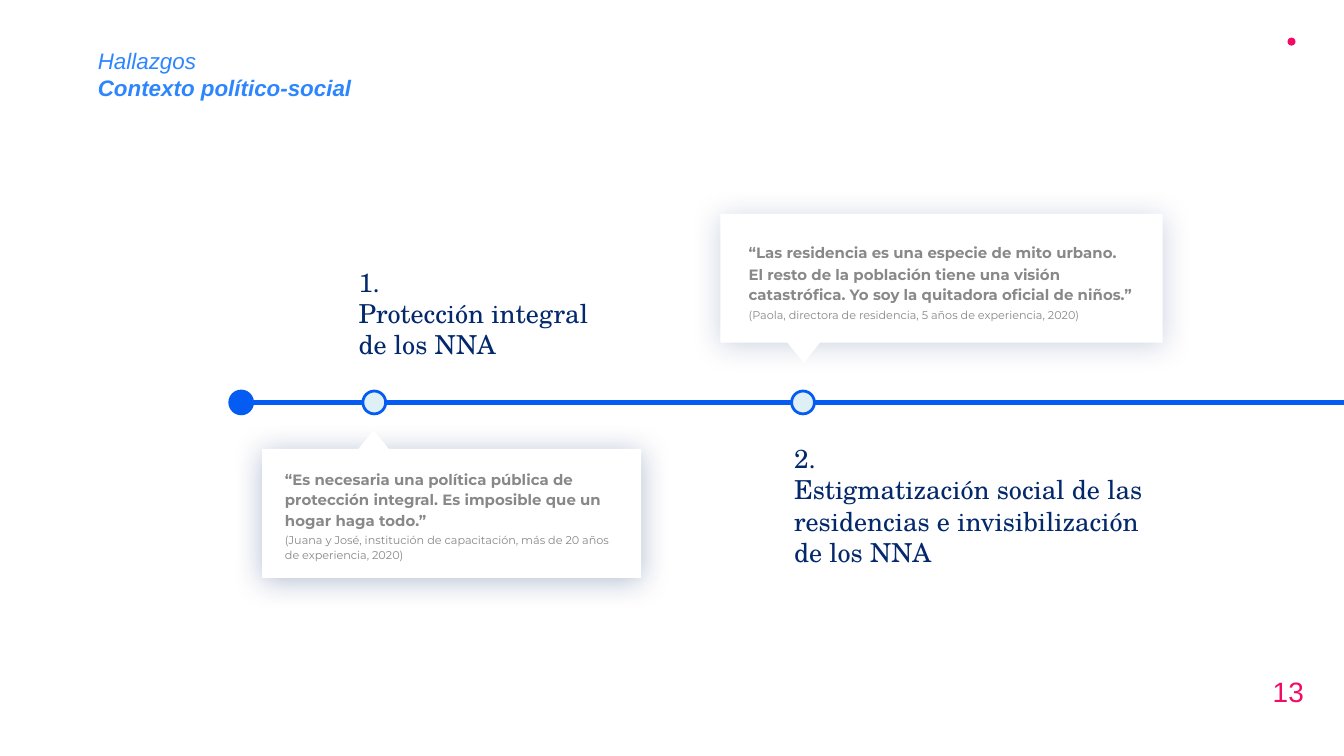
from lxml.etree import SubElement as Sub
from pptx import Presentation
from pptx.dml.color import RGBColor as Rgb
from pptx.enum.shapes import MSO_CONNECTOR as Link, MSO_SHAPE as Form
from pptx.oxml.ns import qn
from pptx.util import Inches, Pt

HUES = {"sky": "2E86FF", "pink": "F20A66", "blue": "055CF2", "pale": "DEF0F5",
        "navy": "03286B", "white": "FFFFFF", "gray": "888888"}
HEAD = {"name": "Arial", "size": Pt(12), "italic": True, "hue": "sky"}
PAGE = {"name": "Arial", "size": Pt(15), "hue": "pink"}
TOPIC = {"name": "TeX Gyre Schola", "size": Pt(14), "hue": "navy"}
QUOTE = {"name": "Montserrat", "size": Pt(8), "bold": True, "hue": "gray"}
CREDIT = QUOTE | {"size": Pt(6), "bold": False}
LOOSE = {"line_spacing": 1.15}
SIDES = ("left", "top", "right", "bottom")
COLS, ROWS = 100, 56.25
AXIS, DOT = 29.95, 1.7


class Deck:
    """Draws the slide on a grid of 100 columns by 56.25 square rows."""

    def __init__(self):
        self.prs = Presentation()
        self.prs.slide_width, self.prs.slide_height = Inches(10), Inches(5.625)
        self.cell = self.prs.slide_width / COLS
        self.slide = self.prs.slides.add_slide(self.prs.slide_layouts[6])

    def grid(self, *cells):
        return [round(c * self.cell) for c in cells]

    def text(self, spot, lines, inset=(1, 1, 1, 1), wrap=True, gap=None):
        frame = self.slide.shapes.add_textbox(*self.grid(*spot)).text_frame
        frame.word_wrap = wrap
        for side, size in zip(SIDES, self.grid(*inset)):
            setattr(frame, f"margin_{side}", size)
        for i, (words, style) in enumerate(lines):
            para = frame.add_paragraph() if i else frame.paragraphs[0]
            form = dict(gap or {})
            if gap and i:
                form["space_before"] = Pt(1)
            for key, val in form.items():
                setattr(para, key, val)
            run = para.add_run()
            run.text = words
            for key, val in style.items():
                if key == "hue":
                    run.font.color.rgb = Rgb.from_string(HUES[val])
                else:
                    setattr(run.font, key, val)

    def shape(self, kind, spot, fill, edge=None, turn=0, home=None):
        item = (home or self.slide).shapes.add_shape(kind, *self.grid(*spot))
        item.shadow.inherit = False
        item.rotation = turn
        item.fill.solid()
        item.fill.fore_color.rgb = Rgb.from_string(HUES[fill])
        if edge:
            self.stroke(item, edge, 1.5)
        else:
            item.line.fill.background()
        return item

    def stroke(self, item, hue, width):
        item.line.color.rgb = Rgb.from_string(HUES[hue])
        item.line.width = Pt(width)

    def line(self, start, end, hue, width):
        item = self.slide.shapes.add_connector(Link.STRAIGHT, *self.grid(*start, *end))
        self.stroke(item, hue, width)
        Sub(item._element.spPr, qn("a:effectLst"))

    def dot(self, left, fill):
        self.shape(Form.OVAL, (left, AXIS - DOT / 2, DOT, DOT), fill, "blue")

    def glow(self, item, share):
        shade = Sub(item._element.spPr.find(qn("a:effectLst")), qn("a:outerShdw"),
                    blurRad=str(Pt(15.8)), dist=str(Pt(1.5)), dir="5400000",
                    algn="bl", rotWithShape="0")
        tint = Sub(shade, qn("a:srgbClr"), val=HUES["navy"])
        Sub(tint, qn("a:alpha"), val=str(share * 1000))

    def card(self, box, tip, turn, share, spot, lines):
        group = self.slide.shapes.add_group_shape()
        self.glow(self.shape(Form.RECTANGLE, box, "white", turn=turn, home=group), share)
        self.shape(Form.ISOSCELES_TRIANGLE, (*tip, 3.2, 2), "white", turn=turn, home=group)
        self.text(spot, lines, (0, 0.3, 0, 0), gap=LOOSE)


def main():
    deck = Deck()
    deck.text((6.3, 2.5, 35.3, 4.3),
              [("Hallazgos", HEAD), ("Contexto político-social", HEAD | {"bold": True})])
    deck.text((94.7, 50.1, 2.4, 2.6), [("13", PAGE)], (0, 0.1, 0, 0), wrap=False)
    deck.shape(Form.OVAL, (95.8, 2.8, 0.6, 0.6), "pink")
    deck.line((17.6, AXIS), (COLS, AXIS), "blue", 2.25)
    for left, fill in ((17.1, "blue"), (27, "pale"), (58.9, "pale")):
        deck.dot(left, fill)
    for spot, lines in (
        ((25.7, 18.8, 22.5, 7.1), ("1.", "Protección integral", "de los NNA")),
        ((58.1, 31.9, 29.8, 7.1),
         ("2.", "Estigmatización social de las residencias e invisibilización de los NNA")),
    ):
        deck.text(spot, [(words, TOPIC) for words in lines])
    deck.card((19.5, 33.4, 28.2, 9.6), (26.2, 32), 0, 30, (21.2, 34.5, 24.8, 4.3), [
        ("“Es necesaria una política pública de protección integral. "
         "Es imposible que un hogar haga todo.”", QUOTE),
        ("(Juana y José, institución de capacitación, más de 20 años de experiencia, 2020)",
         CREDIT)])
    deck.card((53.6, 15.9, 32.9, 9.6), (58.2, 25), 180, 20, (55.7, 17.6, 28.9, 4.3), [
        ("“Las residencia es una especie de mito urbano.", QUOTE),
        ("El resto de la población tiene una visión catastrófica. "
         "Yo soy la quitadora oficial de niños.”", QUOTE),
        ("(Paola, directora de residencia, 5 años de experiencia, 2020)", CREDIT)])
    deck.prs.save("out.pptx")


if __name__ == "__main__":
    main()
